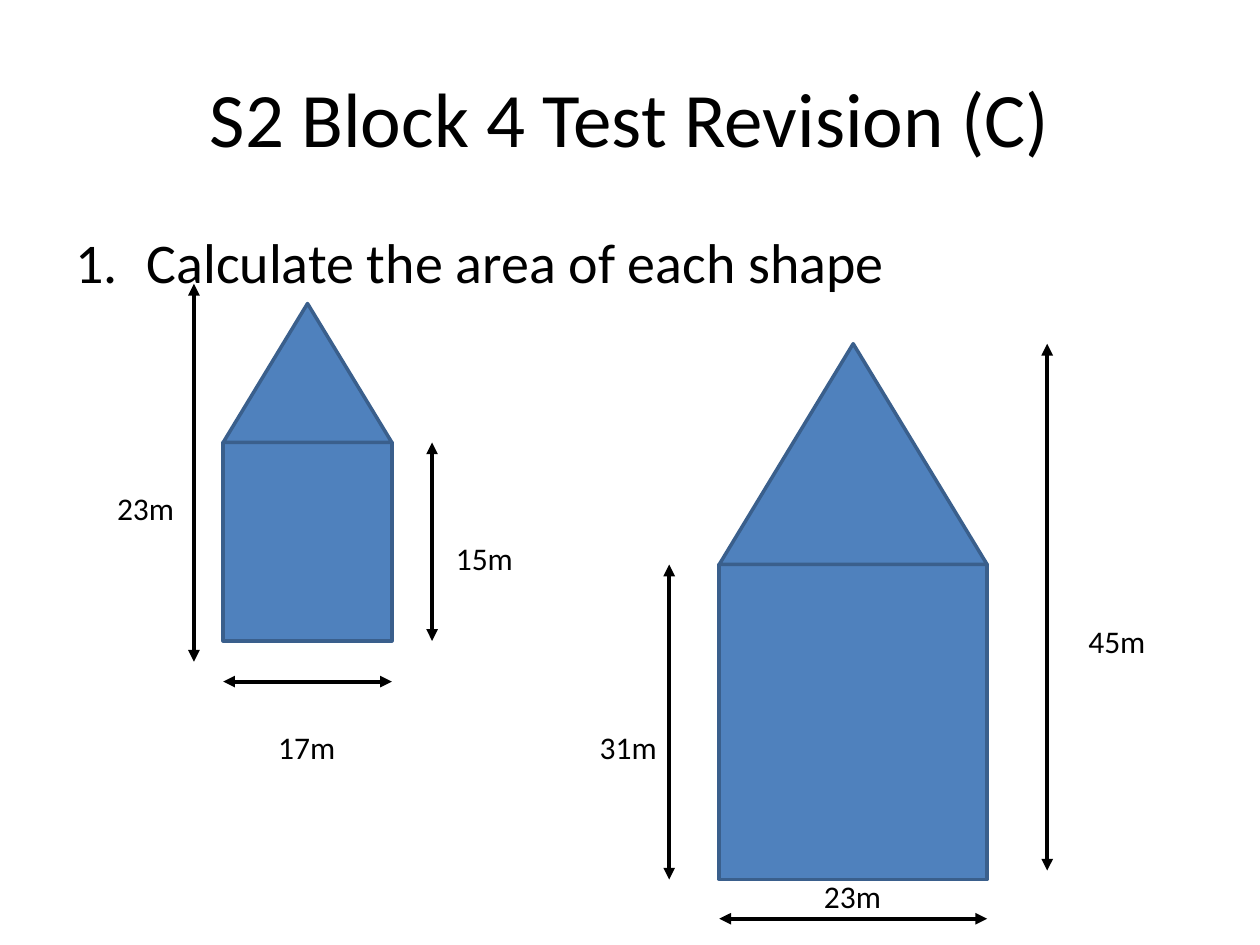
from dataclasses import dataclass

from lxml.etree import SubElement
from pptx import Presentation
from pptx.dml.color import RGBColor
from pptx.enum.shapes import MSO_CONNECTOR, MSO_SHAPE
from pptx.enum.text import MSO_ANCHOR, MSO_AUTO_SIZE, PP_ALIGN
from pptx.oxml.ns import qn
from pptx.util import Cm, Pt


@dataclass(frozen=True)
class Theme:
    font: str = "Calibri"
    ink: RGBColor = RGBColor(0, 0, 0)
    fill: RGBColor = RGBColor(0x4F, 0x81, 0xBD)
    edge: RGBColor = RGBColor(0x3A, 0x5F, 0x8C)
    title: int = 44
    body: int = 32
    label: int = 18


THEME = Theme()


def write(frame, text, size=THEME.label, align=None, anchor=None):
    """Put one formatted paragraph into a text frame."""
    frame.text = text
    para = frame.paragraphs[0]
    para.alignment = align
    frame.vertical_anchor = anchor
    font = para.runs[0].font
    font.name, font.size = THEME.font, Pt(size)
    font.color.rgb = THEME.ink
    return para


def place(shape, left, top, width, height):
    shape.left, shape.top = Cm(left), Cm(top)
    shape.width, shape.height = Cm(width), Cm(height)


def number(para, indent):
    """Number the paragraph, with a hanging indent."""
    props = para._p.get_or_add_pPr()
    props.set("marL", str(Cm(indent)))
    props.set("indent", str(-Cm(indent)))
    SubElement(props, qn("a:buFont"), typeface="+mj-lt")
    SubElement(props, qn("a:buAutoNum"), type="arabicPeriod")


def house(slide, left, top, width, roof, wall):
    """Group a triangle on top of a rectangle."""
    group = slide.shapes.add_group_shape()
    parts = ((MSO_SHAPE.RECTANGLE, top + roof, wall),
             (MSO_SHAPE.ISOSCELES_TRIANGLE, top, roof))
    for kind, y, height in parts:
        shape = group.shapes.add_shape(
            kind, Cm(left), Cm(y), Cm(width), Cm(height))
        shape.shadow.inherit = False
        shape.fill.solid()
        shape.fill.fore_color.rgb = THEME.fill
        shape.line.color.rgb = THEME.edge
        shape.line.width = Pt(2)


def arrow(slide, x1, y1, x2, y2):
    """Draw a line with an arrowhead at both ends."""
    line = slide.shapes.add_connector(
        MSO_CONNECTOR.STRAIGHT, Cm(x1), Cm(y1), Cm(x2), Cm(y2))
    line.line.color.rgb = THEME.ink
    line.line.width = Pt(2.25)
    for end in ("a:headEnd", "a:tailEnd"):
        SubElement(line.line._get_or_add_ln(), qn(end), type="triangle")
    SubElement(line._element.spPr, qn("a:effectLst"))


def label(slide, text, left, top):
    box = slide.shapes.add_textbox(Cm(left), Cm(top), Cm(1.68), Cm(1.02))
    box.text_frame.word_wrap = False
    box.text_frame.auto_size = MSO_AUTO_SIZE.SHAPE_TO_FIT_TEXT
    write(box.text_frame, text)


def main():
    deck = Presentation()
    deck.slide_width, deck.slide_height = Cm(25.4), Cm(19.05)
    slide = deck.slides.add_slide(deck.slide_layouts[1])

    # Title and question
    title, body = slide.placeholders
    place(title, 1.27, 0.76, 22.86, 3.18)
    write(title.text_frame, "S2 Block 4 Test Revision (C)",
          size=THEME.title, align=PP_ALIGN.CENTER, anchor=MSO_ANCHOR.MIDDLE)
    place(body, 1.27, 4.45, 22.86, 12.57)
    task = write(body.text_frame, "Calculate the area of each shape",
                 size=THEME.body)
    number(task, 1.43)

    # Two houses: left, top, width, roof height, wall height
    house(slide, 4.5, 6.12, 3.4, 2.8, 4)
    house(slide, 14.5, 6.93, 5.4, 4.45, 6.35)

    # Dimension arrows
    for ends in ((3.91, 5.72, 3.91, 13.34),
                 (19.9, 18.52, 14.5, 18.52),
                 (7.9, 13.74, 4.5, 13.74),
                 (8.71, 8.92, 8.71, 12.92),
                 (13.49, 11.38, 13.49, 17.73),
                 (21.11, 6.93, 21.11, 17.55)):
        arrow(slide, *ends)

    # Dimension labels
    for text, left, top in (("23m", 2.11, 9.73),
                            ("15m", 8.94, 10.74),
                            ("17m", 5.36, 14.55),
                            ("45m", 21.69, 12.42),
                            ("31m", 11.84, 14.55),
                            ("23m", 16.36, 17.55)):
        label(slide, text, left, top)

    deck.save("out.pptx")


if __name__ == "__main__":
    main()
